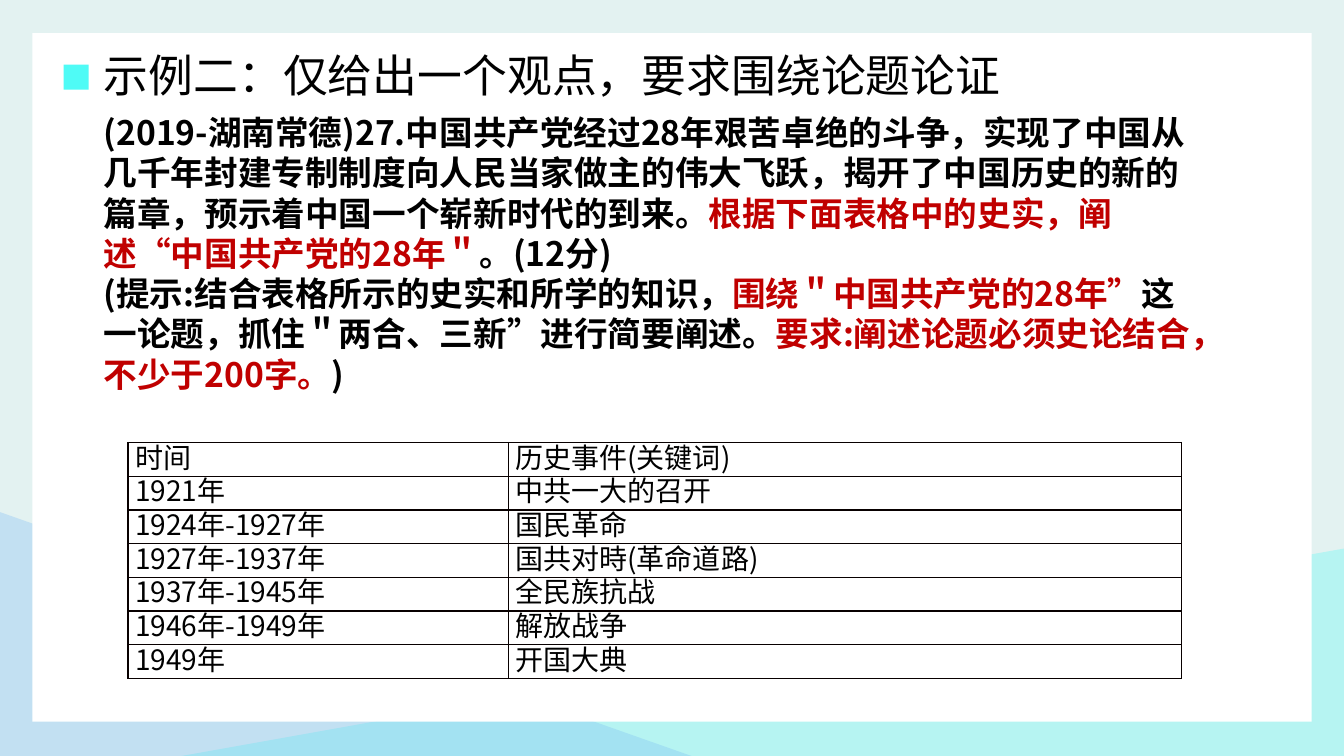
from lxml import etree
from pptx import Presentation
from pptx.dml.color import RGBColor
from pptx.enum.shapes import MSO_SHAPE
from pptx.enum.text import MSO_ANCHOR, PP_ALIGN
from pptx.oxml.ns import qn
from pptx.util import Inches, Pt

RECTANGLE, TRIANGLE = MSO_SHAPE.RECTANGLE, MSO_SHAPE.RIGHT_TRIANGLE
TOP, LEFT = MSO_ANCHOR.TOP, PP_ALIGN.LEFT
FONT = "Noto Sans CJK SC"
BLACK, RED, CYAN, BLUE, WHITE = "000000", "C00000", "4FFBF6", "78B9F5", "FFFFFF"
BACKGROUND, BORDER = "E3F2F1", "080000"

TITLE = "示例二：仅给出一个观点，要求围绕论题论证"
QUESTION = [
    [
        ("(2019-湖南常德)27.中国共产党经过28年艰苦卓绝的斗争，实现了中国从几千年封建专制制度向人民当家做主的伟大飞跃，揭开了中国历史的新的篇章，预示着中国一个崭新时代的到来。", BLACK),
        ("根据下面表格中的史实，阐述“中国共产党的28年＂", RED),
        ("。(12分)", BLACK),
    ],
    [
        ("(提示:结合表格所示的史实和所学的知识，", BLACK),
        ("围绕＂中国共产党的28年”", RED),
        ("这一论题，抓住＂两合、三新”进行简要阐述。", BLACK),
        ("要求:阐述论题必须史论结合，不少于200字。", RED),
        (")", BLACK),
    ],
]
EVENTS = [
    ("时间", "历史事件(关键词)"),
    ("1921年", "中共一大的召开"),
    ("1924年-1927年", "国民革命"),
    ("1927年-1937年", "国共对時(革命道路)"),
    ("1937年-1945年", "全民族抗战"),
    ("1946年-1949年", "解放战争"),
    ("1949年", "开国大典"),
]
COLUMN_WIDTHS = (3.77, 6.68)
TABLE_LEFT, TABLE_TOP, TABLE_HEIGHT = 1.27, 4.39, 2.34
DECORATIONS = [
    (TRIANGLE, (6.54, 0.7, 2.06, 11.54), CYAN, 270, False, 30),
    (TRIANGLE, (2.22, 2.86, 2.42, 6.86), BLUE, 90, True, 30),
    (RECTANGLE, (0.32, 0.33, 12.69, 6.83), WHITE, 0, False, 100),
    (RECTANGLE, (0.63, 0.64, 0.25, 0.25), CYAN, 0, False, 100),
]


def color(value):
    return RGBColor.from_string(value)


def write(frame, paragraphs, size, bold=False):
    frame.word_wrap = True
    frame.vertical_anchor = TOP
    for index, spans in enumerate(paragraphs):
        para = frame.add_paragraph() if index else frame.paragraphs[0]
        para.alignment = LEFT
        para.line_spacing = Pt(size * 1.2)
        para.space_before = para.space_after = Pt(0)
        for text, ink in spans:
            span = para.add_run()
            span.text = text
            span.font.size = Pt(size)
            span.font.bold = bold
            span.font.name = FONT
            span.font.color.rgb = color(ink)
            east_asian = etree.SubElement(span.font._element, qn("a:ea"))
            east_asian.set("typeface", FONT)


def decorate(page, preset, place, fill, rotation, flipped, opacity):
    shape = page.shapes.add_shape(preset, *map(Inches, place))
    shape.shadow.inherit = False
    shape.fill.solid()
    shape.fill.fore_color.rgb = color(fill)
    shape.line.fill.background()
    shape.rotation = rotation
    if flipped:
        shape.element.spPr.xfrm.set("flipH", "1")
    if opacity < 100:
        tint = shape.element.spPr.find(".//" + qn("a:srgbClr"))
        etree.SubElement(tint, qn("a:alpha")).set("val", str(opacity * 1000))


def outline(cell):
    properties = cell._tc.get_or_add_tcPr()
    for position, side in enumerate(("lnL", "lnR", "lnT", "lnB")):
        line = etree.Element(qn("a:" + side), w=str(Pt(1)))
        fill = etree.SubElement(line, qn("a:solidFill"))
        etree.SubElement(fill, qn("a:srgbClr")).set("val", BORDER)
        properties.insert(position, line)


def add_events(page):
    place = (TABLE_LEFT, TABLE_TOP, sum(COLUMN_WIDTHS), TABLE_HEIGHT)
    table = page.shapes.add_table(len(EVENTS), len(COLUMN_WIDTHS), *map(Inches, place)).table
    table.first_row = table.horz_banding = False
    for column, width in zip(table.columns, COLUMN_WIDTHS):
        column.width = Inches(width)
    for row, texts in zip(table.rows, EVENTS):
        row.height = Inches(TABLE_HEIGHT / len(EVENTS))
        for cell, text in zip(row.cells, texts):
            cell.margin_left = cell.margin_right = Inches(0.07)
            cell.margin_top = cell.margin_bottom = 0
            cell.fill.background()
            outline(cell)
            write(cell.text_frame, [[(text, BLACK)]], size=20)


def main():
    deck = Presentation()
    deck.slide_width, deck.slide_height = Inches(13.33), Inches(7.5)
    page = deck.slides.add_slide(deck.slide_layouts[5])
    page.background.fill.solid()
    page.background.fill.fore_color.rgb = color(BACKGROUND)
    for decoration in DECORATIONS:
        decorate(page, *decoration)

    title = page.shapes.title
    title.left, title.top, title.width, title.height = map(Inches, (0.93, 0.42, 9.56, 0.64))
    write(title.text_frame, [[(TITLE, BLACK)]], size=32)
    page.shapes._spTree.append(title.element)

    box = page.shapes.add_textbox(*map(Inches, (0.93, 1.06, 10.99, 2.93)))
    write(box.text_frame, QUESTION, size=24, bold=True)
    add_events(page)
    deck.save("out.pptx")


if __name__ == "__main__":
    main()
